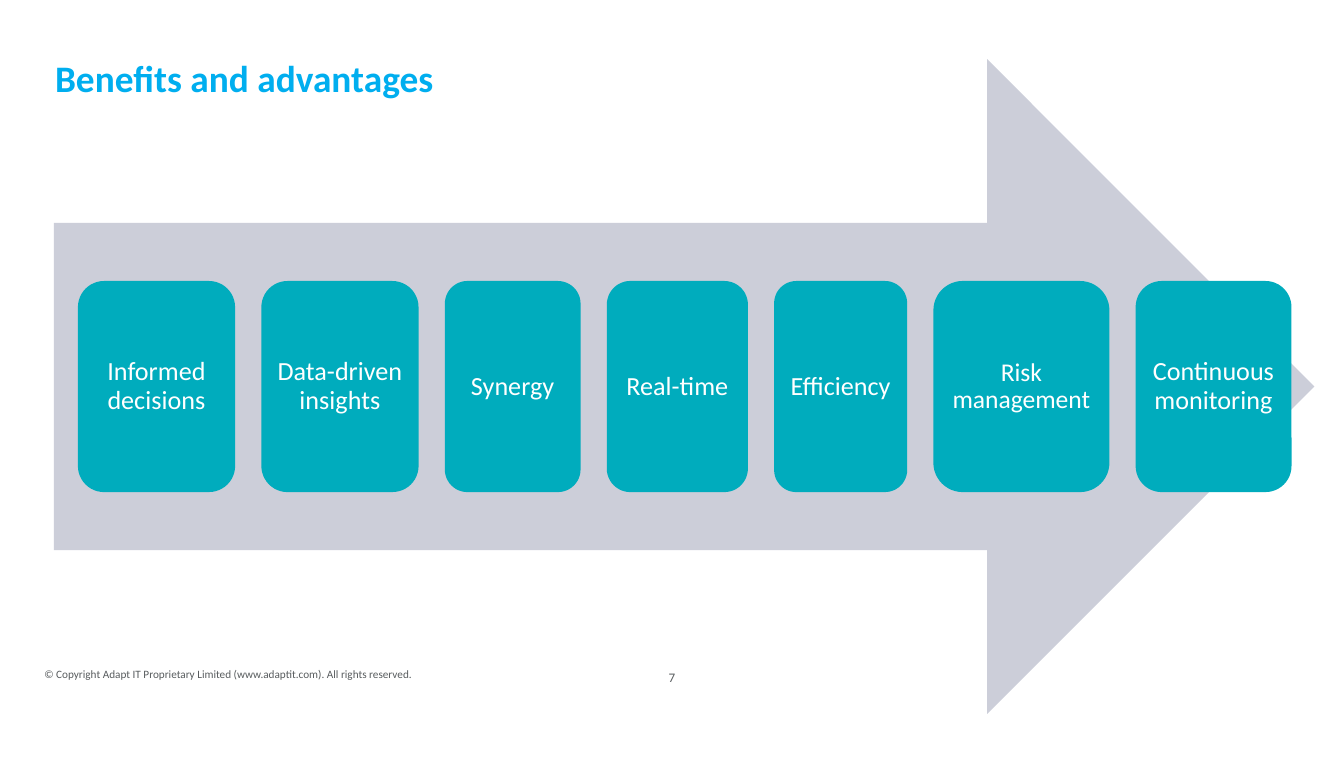
from typing import NamedTuple

from pptx import Presentation
from pptx.dml.color import RGBColor
from pptx.enum.shapes import MSO_SHAPE as Shape
from pptx.enum.text import MSO_ANCHOR as Anchor, PP_ALIGN as Align
from pptx.util import Inches, Pt

COLORS = {
    "title": "00AEEF",
    "arrow": "CCCED9",
    "card": "00ACBD",
    "card_text": "FFFFFF",
    "footer": "585C5E",
}
FONT = "Calibri"
CARD_LEFT, CARD_TOP, CARD_HEIGHT = 0.58, 2.09, 1.57
CARD_GAP = 0.195
CARD_INSET = 0.06


class Area(NamedTuple):
    left: float
    top: float
    width: float
    height: float

    def lengths(self):
        return [Inches(value) for value in self]


class Benefit(NamedTuple):
    label: str
    width: float
    size: float = 14


BENEFITS = [
    Benefit("Informed decisions", 1.17),
    Benefit("Data-driven insights", 1.17),
    Benefit("Synergy", 1.01),
    Benefit("Real-time", 1.05),
    Benefit("Efficiency", 0.99),
    Benefit("Risk management", 1.31, 13.7),
    Benefit("Continuous monitoring", 1.16),
]


def write_text(box, text: str, size: float, color: str,
               align=Align.LEFT, inset: float = 0):
    """Fill a shape with one vertically centred paragraph."""
    frame = box.text_frame
    frame.word_wrap = True
    frame.vertical_anchor = Anchor.MIDDLE
    frame.margin_left = frame.margin_right = Inches(inset)
    frame.margin_top = frame.margin_bottom = Inches(inset)
    para = frame.paragraphs[0]
    para.text = text
    para.alignment = align
    para.font.name = FONT
    para.font.size = Pt(size)
    para.font.color.rgb = RGBColor.from_string(COLORS[color])
    return para


def add_label(slide, area: Area, text: str, size: float, color: str,
              align=Align.LEFT):
    box = slide.shapes.add_textbox(*area.lengths())
    return write_text(box, text, size, color, align)


def add_solid(slide, kind, area: Area, color: str):
    """Add a flat preset shape without an outline."""
    shape = slide.shapes.add_shape(kind, *area.lengths())
    shape.shadow.inherit = False
    shape.fill.solid()
    shape.fill.fore_color.rgb = RGBColor.from_string(COLORS[color])
    shape.line.fill.background()
    return shape


def add_cards(slide, benefits: list[Benefit]) -> None:
    left = CARD_LEFT
    for benefit in benefits:
        area = Area(left, CARD_TOP, benefit.width, CARD_HEIGHT)
        card = add_solid(slide, Shape.ROUNDED_RECTANGLE, area, "card")
        para = write_text(card, benefit.label, benefit.size, "card_text",
                          Align.CENTER, CARD_INSET)
        para.line_spacing = 0.9
        left += benefit.width + CARD_GAP


def main() -> None:
    deck = Presentation()
    deck.slide_width, deck.slide_height = Inches(10), Inches(5.63)
    slide = deck.slides.add_slide(deck.slide_layouts[6])

    # Footer
    add_label(slide, Area(0.33, 4.78, 3.45, 0.46),
              "© Copyright Adapt IT Proprietary Limited (www.adaptit.com). "
              "All rights reserved.", 6, "footer")
    add_label(slide, Area(4.31, 4.78, 1.38, 0.52), "7", 7, "footer",
              Align.CENTER)

    # Title
    title = add_label(slide, Area(0.41, 0.32, 9.17, 0.53),
                      "Benefits and advantages", 20, "title")
    title.font.bold = True
    title.line_spacing = Pt(22.6)

    # Arrow with the benefit cards on it
    add_solid(slide, Shape.RIGHT_ARROW, Area(0.4, 0.44, 9.38, 4.87), "arrow")
    add_cards(slide, BENEFITS)

    deck.save("out.pptx")


if __name__ == "__main__":
    main()
